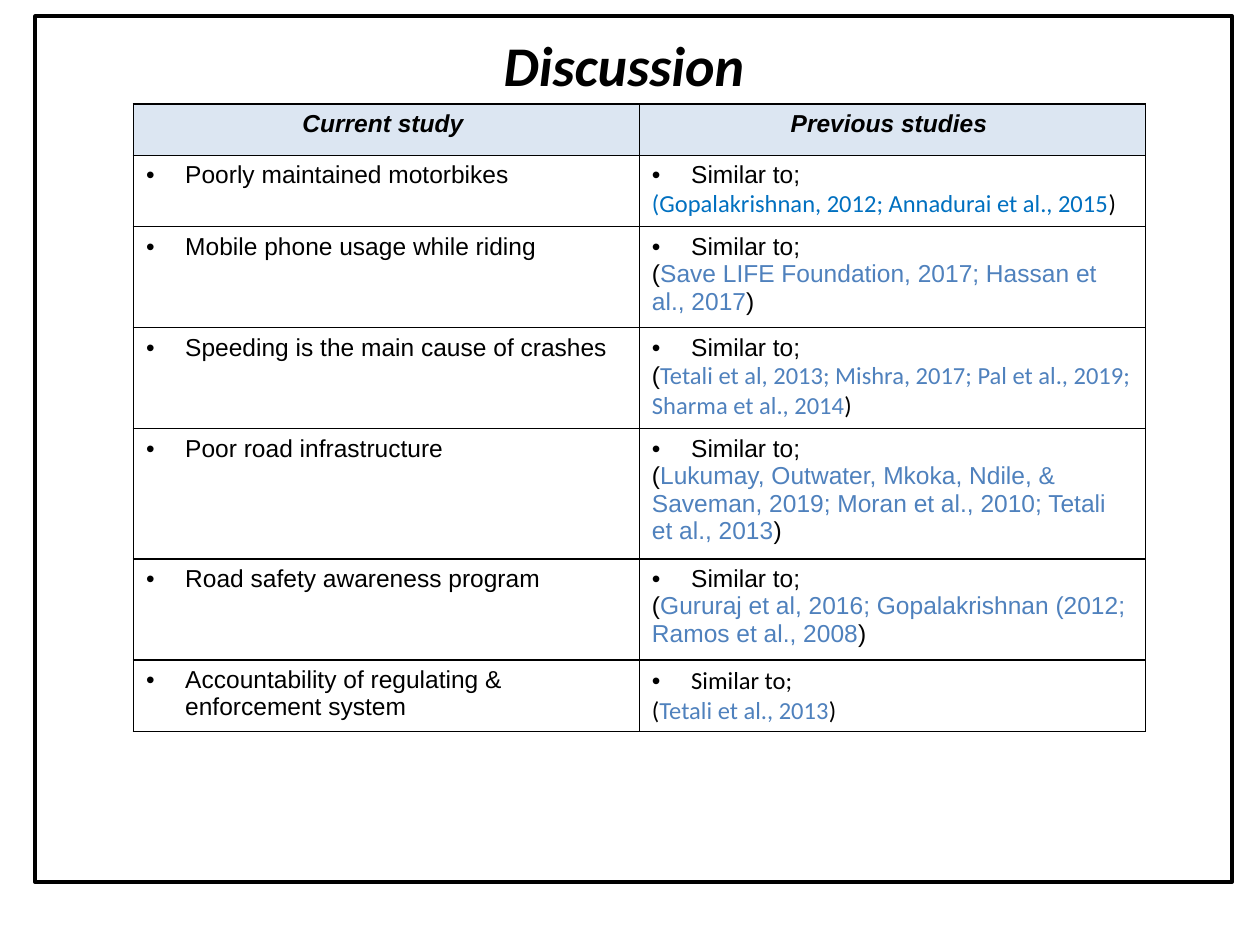
from lxml import etree
from pptx import Presentation
from pptx.dml.color import RGBColor
from pptx.enum import shapes, text
from pptx.oxml import parse_xml
from pptx.oxml.ns import nsdecls, qn
from pptx.util import Cm, Pt

BLACK, CITE, BRIGHT_CITE, HEADER_FILL = "000000", "4F81BD", "0070C0", "DCE6F2"
ARIAL, CALIBRI = "Arial", "Calibri"
HEADINGS = ("Current study ", "Previous studies ")

# Finding, lead-in font, then the runs of the citation: (text, font, colour)
FINDINGS = [
    ("Poorly maintained motorbikes", ARIAL,
     [("(Gopalakrishnan, 2012; Annadurai et al., 2015", CALIBRI, BRIGHT_CITE),
      (")", CALIBRI, BLACK)]),
    ("Mobile phone usage while riding", ARIAL,
     [("(", ARIAL, BLACK),
      ("Save LIFE Foundation, 2017; Hassan et al., 2017", ARIAL, CITE),
      (")", ARIAL, BLACK)]),
    ("Speeding is the main cause of crashes", ARIAL,
     [("(", ARIAL, BLACK),
      ("Tetali et al, 2013; Mishra, 2017; Pal et al., 2019; "
       "Sharma et al., 2014", CALIBRI, CITE),
      (")", CALIBRI, BLACK)]),
    ("Poor road infrastructure", ARIAL,
     [("(", ARIAL, BLACK),
      ("Lukumay, Outwater, Mkoka, Ndile, & Saveman, 2019; "
       "Moran et al., 2010; Tetali et al., 2013", ARIAL, CITE),
      (")", ARIAL, BLACK)]),
    ("Road safety awareness program", ARIAL,
     [("(", ARIAL, BLACK),
      ("Gururaj et al, 2016; Gopalakrishnan (2012; Ramos et al., 2008",
       ARIAL, CITE),
      (")", ARIAL, BLACK)]),
    ("Accountability of regulating & enforcement system", CALIBRI,
     [("(", CALIBRI, BLACK),
      ("Tetali et al., 2013", CALIBRI, CITE),
      (")", CALIBRI, BLACK)]),
]


def rgb(value):
    return RGBColor.from_string(value)


def add_text(paragraph, words, size=14, font=ARIAL, color=BLACK, bold=False,
             italic=False, centred=False, bullet=False):
    """Append a formatted run, with alignment or a bullet on its paragraph."""
    if bullet:
        properties = paragraph._p.get_or_add_pPr()
        properties.set("marL", str(Cm(0.79)))
        properties.set("indent", str(-Cm(0.79)))
        etree.SubElement(properties, qn("a:buFont")).set("typeface", ARIAL)
        etree.SubElement(properties, qn("a:buChar")).set("char", "•")
    if centred:
        paragraph.alignment = text.PP_ALIGN.CENTER
    run = paragraph.add_run()
    run.text = words
    run.font.size = Pt(size)
    run.font.name = font
    run.font.bold = bold
    run.font.italic = italic
    run.font.color.rgb = rgb(color)


def style_cell(cell, fill=None):
    """Give the cell a fill, or none, and a thin black border all round."""
    if fill:
        cell.fill.solid()
        cell.fill.fore_color.rgb = rgb(fill)
    else:
        cell.fill.background()
    properties = cell._tc.get_or_add_tcPr()
    for position, side in enumerate("LRTB"):
        properties.insert(position, parse_xml(
            f'<a:ln{side} {nsdecls("a")} w="{Pt(1)}"><a:solidFill>'
            f'<a:srgbClr val="{BLACK}"/></a:solidFill></a:ln{side}>'))


def add_frame(slide, left, top, width, height):
    frame = slide.shapes.add_shape(shapes.MSO_SHAPE.RECTANGLE,
                                   left, top, width, height)
    frame.shadow.inherit = False
    frame.fill.background()
    frame.line.color.rgb = rgb(BLACK)
    frame.line.width = Pt(2.25)


def add_title(slide, left, top, width, height):
    title = slide.shapes.add_textbox(left, top, width, height).text_frame
    title.word_wrap = True
    title.vertical_anchor = text.MSO_ANCHOR.MIDDLE
    add_text(title.paragraphs[0], "Discussion ", size=32, font=CALIBRI,
             bold=True, italic=True, centred=True)


def add_comparison(slide, left, top, width, row_height):
    """Place the findings beside earlier studies; rows grow with their text."""
    row_count = len(FINDINGS) + 1
    table = slide.shapes.add_table(row_count, 2, left, top, width,
                                   row_height * row_count).table
    table.horz_banding = False
    for column, heading in enumerate(HEADINGS):
        cell = table.cell(0, column)
        style_cell(cell, HEADER_FILL)
        add_text(cell.text_frame.paragraphs[0], heading,
                 bold=True, italic=True, centred=True)
    for row, (finding, lead_font, citation) in enumerate(FINDINGS, 1):
        current, previous = table.cell(row, 0), table.cell(row, 1)
        style_cell(current)
        style_cell(previous)
        add_text(current.text_frame.paragraphs[0], finding, bullet=True)
        add_text(previous.text_frame.paragraphs[0], "Similar to;",
                 font=lead_font, bullet=True)
        sources = previous.text_frame.add_paragraph()
        for words, font, color in citation:
            add_text(sources, words, font=font, color=color)


def main():
    deck = Presentation()
    deck.slide_width, deck.slide_height = Cm(25.4), Cm(19.05)
    slide = deck.slides.add_slide(deck.slide_layouts[6])
    add_frame(slide, Cm(0.71), Cm(0.33), Cm(24.13), Cm(17.45))
    add_title(slide, Cm(0.71), Cm(0.53), Cm(24), Cm(1.52))
    add_comparison(slide, Cm(2.69), Cm(2.1), Cm(20.4), Cm(1.03))
    deck.save("out.pptx")


if __name__ == "__main__":
    main()
